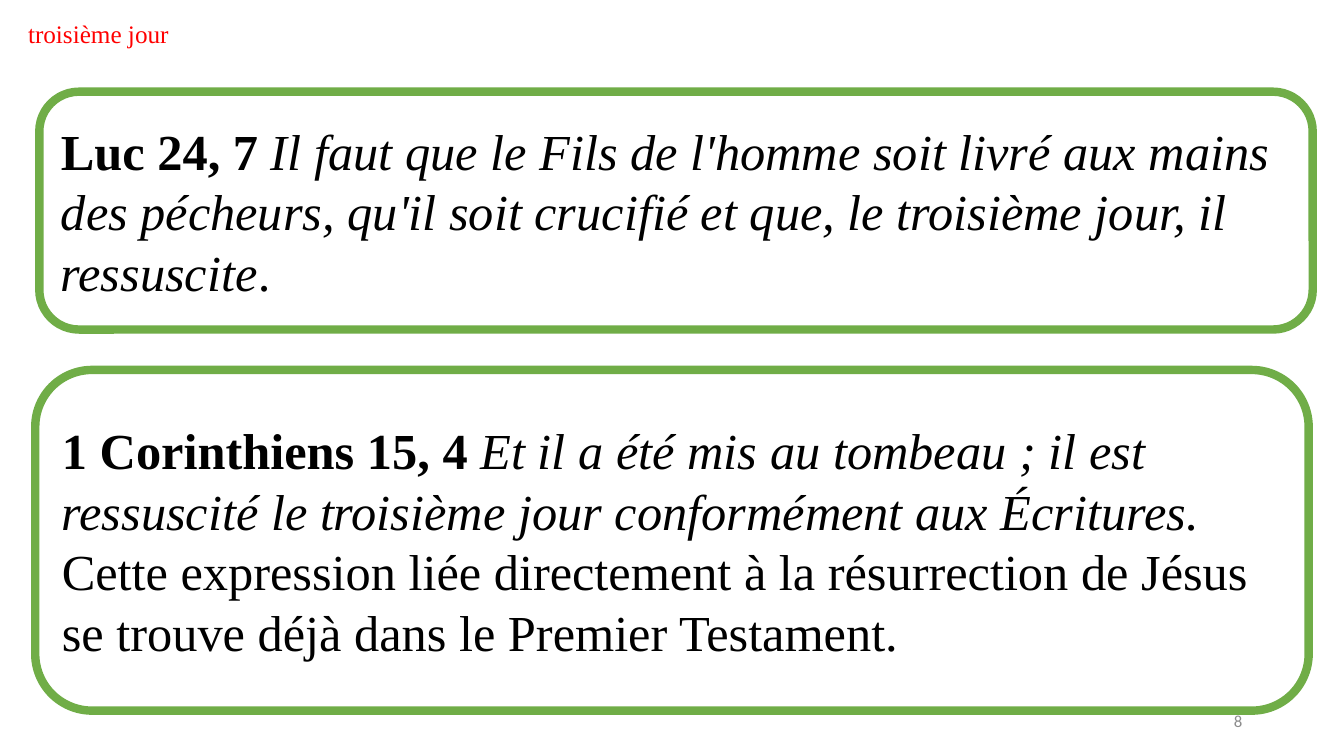
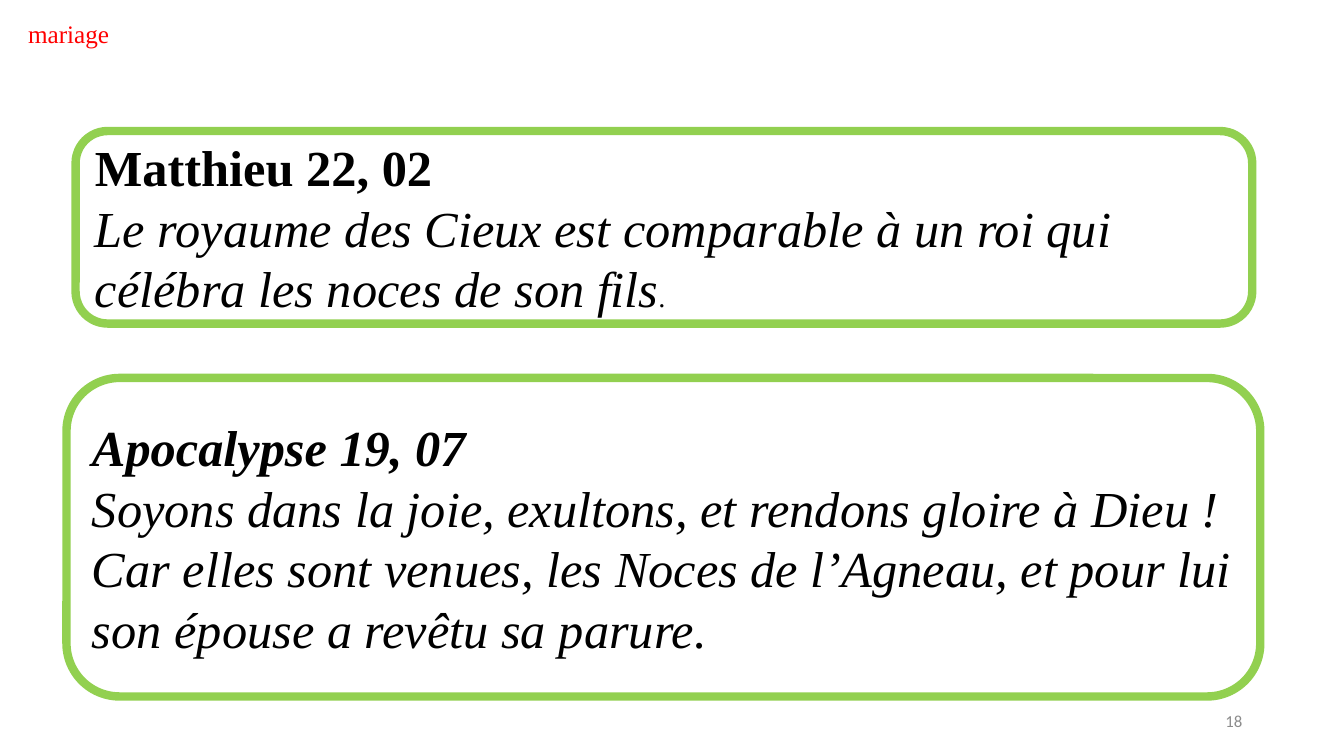
import pptx
import pptx.dml.color
import pptx.enum.shapes
import pptx.enum.text
import pptx.util

SERIF, SANS = "Times New Roman", "Calibri"
RED, GREY, BLACK = "FF0000", "8C8C8C", "000000"
TITLE_AREA = (0.18, 0.13, 1.63, 0.4)
NUMBER_AREA = (9.42, 6.95, 3, 0.4)
VERSE_SIZE, BORDER_WIDTH = 36, 6

# A paragraph is a list of (text, style, optional size); style holds "b" and/or "i".
SLIDES = [
    {
        "title": "troisième jour", "number": "8", "border": "70AD47",
        "verses": [
            ((0.39, 0.91, 12.63, 2.36), [
                [("Luc 24, 7 ", "b"),
                 ("Il faut que le Fils de l'homme soit livré aux mains des pécheurs, "
                  "qu'il soit crucifié et que, le troisième jour, il ressuscite", "i"),
                 (".", "")],
            ]),
            ((0.35, 3.67, 12.63, 3.38), [
                [("1 Corinthiens 15, 4 ", "b"),
                 ("Et il a été mis au tombeau ; il est ressuscité le troisième jour "
                  "conformément aux Écritures.", "i")],
                [("Cette expression liée directement à la résurrection de Jésus "
                  "se trouve déjà dans le Premier Testament.", "")],
            ]),
        ],
    },
    {
        "title": "mariage", "number": "18", "border": "92D050",
        "verses": [
            ((0.75, 1.3, 11.67, 1.91), [
                [("Matthieu 22, 02 ", "b")],
                [("Le royaume des Cieux est comparable à un roi qui célébra "
                  "les noces de son fils", "i"),
                 (".", "i", 20)],
            ]),
            ((0.66, 3.75, 11.84, 3.16), [
                [("Apocalypse 19, 07 ", "bi")],
                [("Soyons dans la joie, exultons, et rendons gloire à Dieu ! "
                  "Car elles sont venues, les Noces de l’Agneau, et pour lui "
                  "son épouse a revêtu sa parure.", "i")],
            ]),
        ],
    },
]


def colour(value):
    return pptx.dml.color.RGBColor.from_string(value)


def inches(area):
    return [pptx.util.Inches(length) for length in area]


def set_font(font, name, size, value):
    font.name = name
    font.size = pptx.util.Pt(size)
    font.color.rgb = colour(value)


def add_label(page, area, text, name, size, value):
    frame = page.shapes.add_textbox(*inches(area)).text_frame
    frame.text = text
    set_font(frame.paragraphs[0].runs[0].font, name, size, value)
    return frame


def add_verse(page, area, paragraphs, border):
    kind = pptx.enum.shapes.MSO_SHAPE.ROUNDED_RECTANGLE
    box = page.shapes.add_shape(kind, *inches(area))
    box.shadow.inherit = False
    box.fill.background()
    box.line.color.rgb = colour(border)
    box.line.width = pptx.util.Pt(BORDER_WIDTH)
    frame = box.text_frame
    frame.word_wrap = True
    frame.vertical_anchor = pptx.enum.text.MSO_ANCHOR.MIDDLE
    for index, spans in enumerate(paragraphs):
        para = frame.add_paragraph() if index else frame.paragraphs[0]
        para.alignment = pptx.enum.text.PP_ALIGN.LEFT
        for text, style, *size in spans:
            span = para.add_run()
            span.text = text
            set_font(span.font, SERIF, size[0] if size else VERSE_SIZE, BLACK)
            span.font.bold = "b" in style
            span.font.italic = "i" in style


def add_page(deck, content):
    page = deck.slides.add_slide(deck.slide_layouts[6])
    title = add_label(page, TITLE_AREA, content["title"], SERIF, 18, RED)
    title.auto_size = pptx.enum.text.MSO_AUTO_SIZE.SHAPE_TO_FIT_TEXT
    title.word_wrap = True
    number = add_label(page, NUMBER_AREA, content["number"], SANS, 12, GREY)
    number.word_wrap = True
    number.vertical_anchor = pptx.enum.text.MSO_ANCHOR.MIDDLE
    number.paragraphs[0].alignment = pptx.enum.text.PP_ALIGN.RIGHT
    for area, paragraphs in content["verses"]:
        add_verse(page, area, paragraphs, content["border"])


def main():
    deck = pptx.Presentation()
    deck.slide_width, deck.slide_height = inches((13.33, 7.5))
    for content in SLIDES:
        add_page(deck, content)
    deck.save("out.pptx")


if __name__ == "__main__":
    main()
